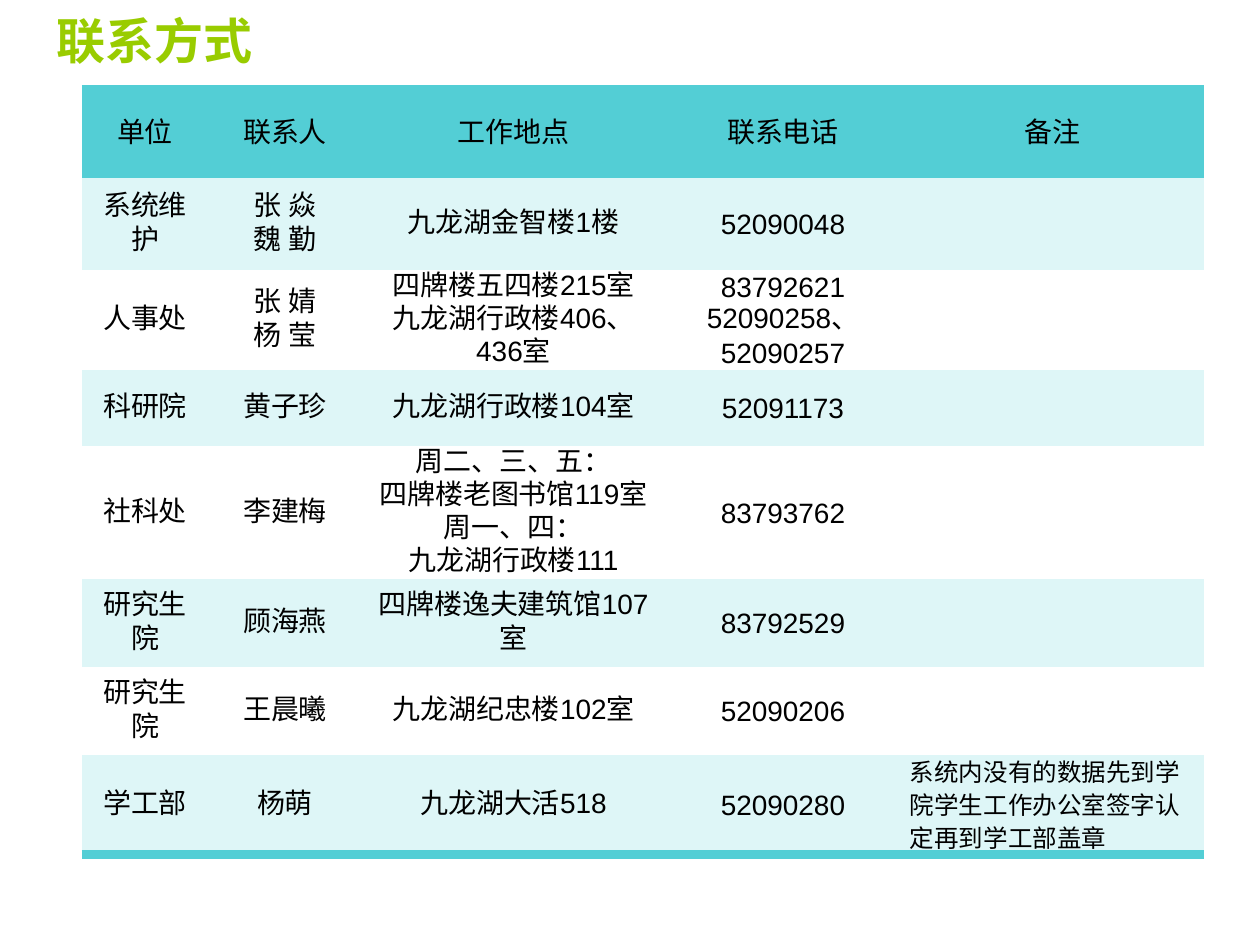
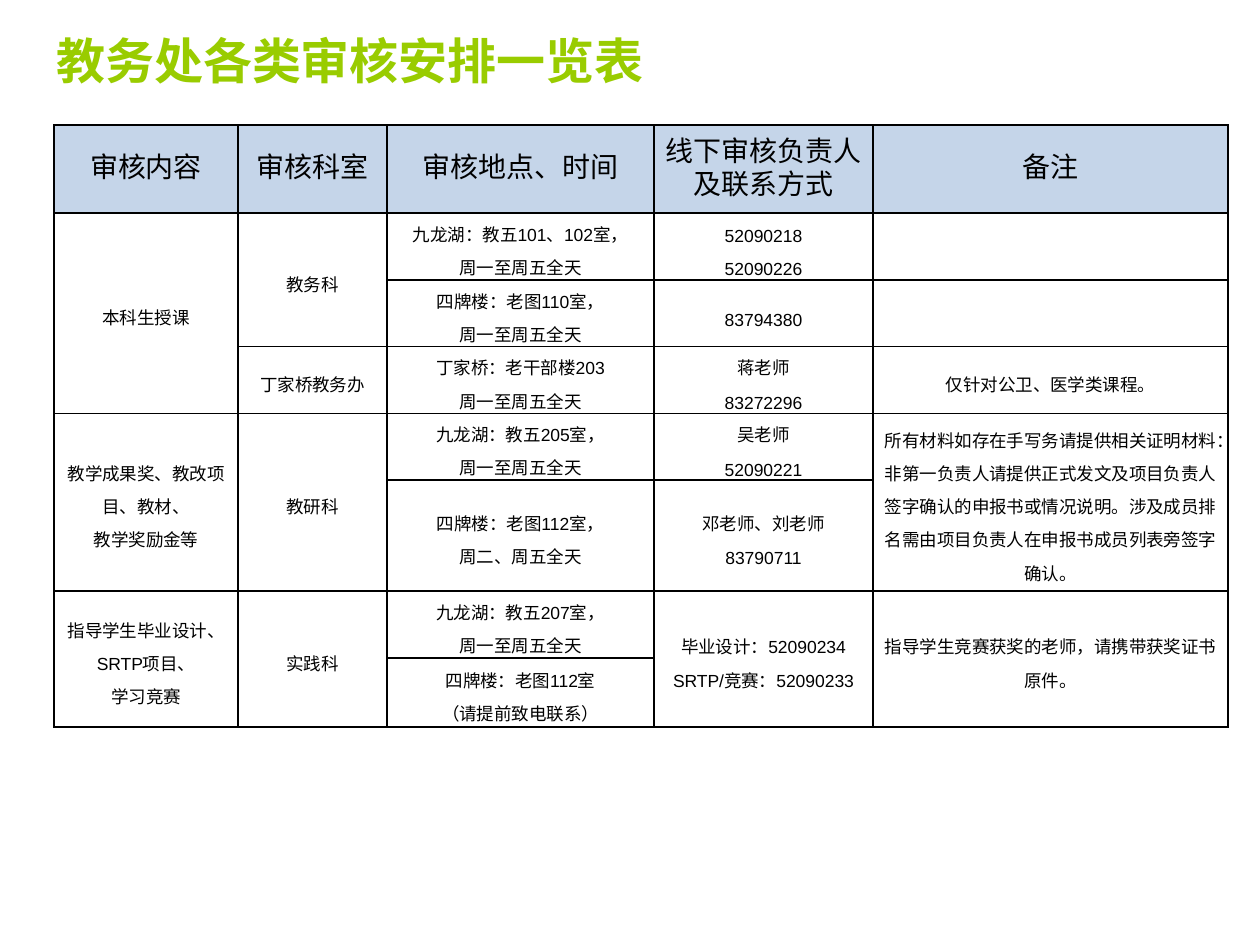
"""Build two slides of contact details and review arrangements, each a title over a table."""
from itertools import takewhile

from lxml.etree import SubElement
from pptx import Presentation
from pptx.dml.color import RGBColor
from pptx.enum.text import MSO_ANCHOR as Anchor, PP_ALIGN as Align
from pptx.oxml.ns import qn
from pptx.util import Emu, Pt

CJK_FONT = "Noto Sans CJK SC"
LATIN_FONT = "Arial"
LIME, TEAL, MINT, WHITE, BLACK, BLUE = "99CC00", "53CED5", "DEF6F7", "FFFFFF", "000000", "4F81BD"
PLAIN_TABLE = "{2D5ABB26-0587-4C30-8999-92F81FD0307C}"


def px(count):
    return Emu(round(count * 914400 / 126))


def style_run(run, size, colour, latin=LATIN_FONT, bold=False):
    run.font.size = Pt(size)
    run.font.name = latin
    run.font.bold = bold
    run.font.color.rgb = RGBColor.from_string(colour)
    SubElement(run.font._element, qn("a:ea"), typeface=CJK_FONT)


contacts = [
    ["单位", "联系人", "工作地点", "联系电话", "备注"],
    ["系统维护", "张 焱\n魏 勤", "九龙湖金智楼1楼", "52090048", ""],
    ["人事处", "张 婧\n杨 莹", "四牌楼五四楼215室\n九龙湖行政楼406、436室",
     "83792621\n52090258、52090257", ""],
    ["科研院", "黄子珍", "九龙湖行政楼104室", "52091173", ""],
    ["社科处", "李建梅", "周二、三、五：\n四牌楼老图书馆119室\n周一、四：\n九龙湖行政楼111",
     "83793762", ""],
    ["研究生院", "顾海燕", "四牌楼逸夫建筑馆107室", "83792529", ""],
    ["研究生院", "王晨曦", "九龙湖纪忠楼102室", "52090206", ""],
    ["学工部", "杨萌", "九龙湖大活518", "52090280",
     "系统内没有的数据先到学院学生工作办公室签字认定再到学工部盖章"],
]
reviews = [
    ["审核内容", "审核科室", "审核地点、时间", "线下审核负责人\n及联系方式", "备注"],
    ["本科生授课", "教务科", "九龙湖：教五101、102室，\n周一至周五全天", "52090218\n52090226", ""],
    [None, None, "四牌楼：老图110室，\n周一至周五全天", "83794380", ""],
    [None, "丁家桥教务办", "丁家桥：老干部楼203\n周一至周五全天", "蒋老师\n83272296",
     "仅针对公卫、医学类课程。"],
    ["教学成果奖、教改项目、教材、\n教学奖励金等", "教研科", "九龙湖：教五205室，\n周一至周五全天",
     "吴老师\n52090221",
     "所有材料如存在手写务请提供相关证明材料：非第一负责人请提供正式发文及项目负责人"
     "签字确认的申报书或情况说明。涉及成员排名需由项目负责人在申报书成员列表旁签字确认。"],
    [None, None, "四牌楼：老图112室，\n周二、周五全天", "邓老师、刘老师\n83790711", None],
    ["指导学生毕业设计、SRTP项目、\n学习竞赛", "实践科", "九龙湖：教五207室，\n周一至周五全天",
     "毕业设计：52090234\nSRTP/竞赛：52090233", "指导学生竞赛获奖的老师，请携带获奖证书原件。"],
    [None, None, "四牌楼：老图112室\n（请提前致电联系）", None, None],
]
pages = [
    dict(title="联系方式", title_top=6, left=82, top=90, rows=contacts, body_size=16, banded=True,
         widths=[126, 154, 303, 236, 303], heights=[88, 92, 100, 76, 133, 88, 88, 100]),
    dict(title="教务处各类审核安排一览表", title_top=26, left=54, top=125, rows=reviews,
         body_size=10, banded=False, widths=[184, 149, 267, 219, 355],
         heights=[88, 67, 66, 67, 66, 111, 67, 69]),
]

deck = Presentation()
deck.slide_width, deck.slide_height = px(1260), px(945)

for page in pages:
    slide = deck.slides.add_slide(deck.slide_layouts[6])
    rows, widths, heights = page["rows"], page["widths"], page["heights"]
    frame = slide.shapes.add_table(len(rows), len(widths), px(page["left"]), px(page["top"]),
                                   px(sum(widths)), px(sum(heights)))
    grid = frame.table
    grid.first_row = grid.horz_banding = False
    next(frame.element.iter(qn("a:tableStyleId"))).text = PLAIN_TABLE
    for column, width in zip(grid.columns, widths):
        column.width = px(width)
    for line, height in zip(grid.rows, heights):
        line.height = px(height)

    for r, row in enumerate(rows):
        for c, words in enumerate(row):
            cell = grid.cell(r, c)
            cell.margin_left = cell.margin_right = px(9)
            cell.margin_top = cell.margin_bottom = 0
            cell.vertical_anchor = Anchor.MIDDLE

            if page["banded"]:
                edges = {0: ["lnT"], len(rows) - 1: ["lnB"]}.get(r, [])
                edge_colour, edge_width = TEAL, 6
            else:
                edges = ["lnL", "lnR", "lnT", "lnB"]
                edge_colour, edge_width = BLACK, 1
            for edge in edges:
                border = SubElement(cell._tc.get_or_add_tcPr(), qn(f"a:{edge}"), w=str(Pt(edge_width)))
                SubElement(SubElement(border, qn("a:solidFill")), qn("a:srgbClr"), val=edge_colour)

            if page["banded"] or r == 0:
                band = TEAL if r == 0 else MINT if r % 2 else WHITE
                cell.fill.solid()
                cell.fill.fore_color.rgb = RGBColor.from_string(band if page["banded"] else BLUE)
                if not page["banded"]:
                    tint = cell._tc.tcPr.find(qn("a:solidFill"))[0]
                    SubElement(tint, qn("a:alpha"), val="33000")
            else:
                cell.fill.background()

            if words is None:
                continue
            covered = len(list(takewhile(lambda below: below[c] is None, rows[r + 1:])))
            if covered:
                cell.merge(grid.cell(r + covered, c))
            side_note = page["banded"] and r > 0 and c == 4
            size = 16 if r == 0 else 14 if side_note else page["body_size"]
            cell.text_frame.text = words
            for paragraph in cell.text_frame.paragraphs:
                paragraph.alignment = Align.LEFT if side_note else Align.CENTER
                paragraph.line_spacing = Pt(19)
                for run in paragraph.runs:
                    style_run(run, size, BLACK)

    heading = slide.shapes.add_textbox(px(44), px(page["title_top"]), px(1134), px(68)).text_frame
    heading.word_wrap = True
    heading.vertical_anchor = Anchor.MIDDLE
    heading.text = page["title"]
    style_run(heading.paragraphs[0].runs[0], 28, LIME, CJK_FONT, True)

deck.save("out.pptx")
